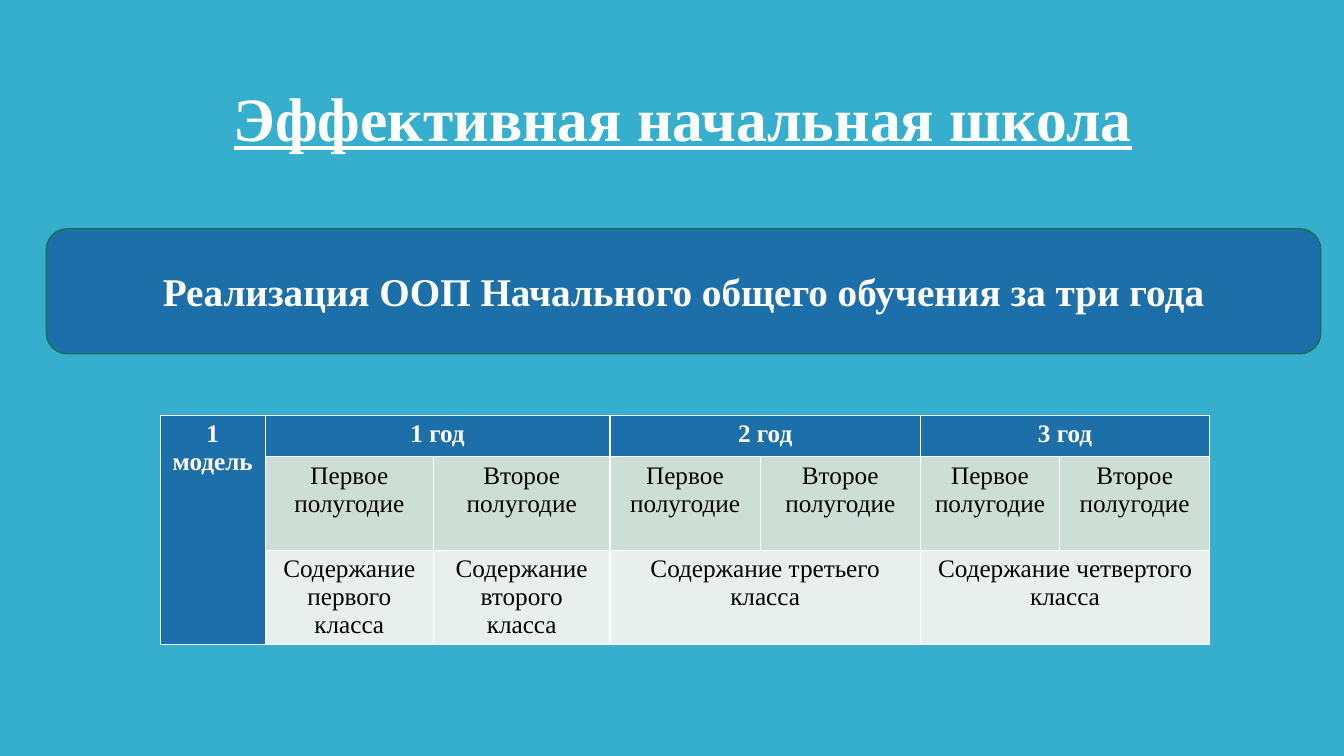
"""Build the slide on the three-year primary school model."""
from dataclasses import dataclass

from pptx import Presentation
from pptx.dml.color import RGBColor
from pptx.enum.shapes import MSO_SHAPE
from pptx.enum.text import MSO_ANCHOR, PP_ALIGN
from pptx.util import Inches, Pt

ROUND = MSO_SHAPE.ROUNDED_RECTANGLE
MIDDLE = MSO_ANCHOR.MIDDLE
CENTER = PP_ALIGN.CENTER


@dataclass(frozen=True)
class Theme:
    """Hold the colours, font and type sizes."""
    back: str = "36AFCE"
    blue: str = "1D6FA9"
    edge: str = "157259"
    white: str = "FFFFFF"
    black: str = "000000"
    sage: str = "CDDED6"
    pale: str = "E8EFEC"
    font: str = "Times New Roman"
    title: int = 44
    banner: int = 28
    cell: int = 18


theme = Theme()


def paint(fill, color):
    """Fill with one solid colour."""
    fill.solid()
    fill.fore_color.rgb = RGBColor.from_string(color)


def write(frame, text, size, color, bold=True):
    """Set centred text and format its run."""
    frame.text = text
    frame.word_wrap = True
    para = frame.paragraphs[0]
    para.alignment = CENTER
    font = para.runs[0].font
    font.name = theme.font
    font.size = Pt(size)
    font.bold = bold
    font.color.rgb = RGBColor.from_string(color)
    return para


deck = Presentation()
deck.slide_width = Inches(13.33)
deck.slide_height = Inches(7.5)
slide = deck.slides.add_slide(deck.slide_layouts[5])
paint(slide.background.fill, theme.back)

title = slide.shapes.title
title.left, title.top = Inches(1.67), Inches(0.41)
title.width, title.height = Inches(10.21), Inches(1.59)
title.text_frame.vertical_anchor = MIDDLE
head = write(title.text_frame, "Эффективная начальная школа", theme.title, theme.white)
head.line_spacing = 0.9
head.runs[0].font.underline = True

banner = slide.shapes.add_shape(
    ROUND, Inches(0.46), Inches(2.27), Inches(12.64), Inches(1.24))
banner.shadow.inherit = False
paint(banner.fill, theme.blue)
paint(banner.line.fill, theme.edge)
banner.line.width = Pt(1)
banner.text_frame.vertical_anchor = MIDDLE
write(banner.text_frame, "Реализация ООП Начального общего обучения за три года",
      theme.banner, theme.white)

widths = [1.04, 1.67, 1.75, 1.49, 1.59, 1.38, 1.49]
heights = [0.41, 0.93, 0.93]
table = slide.shapes.add_table(
    len(heights), len(widths), Inches(1.59), Inches(4.12),
    Inches(sum(widths)), Inches(sum(heights))).table
for column, width in zip(table.columns, widths):
    column.width = Inches(width)
for row, height in zip(table.rows, heights):
    row.height = Inches(height)

fills = [theme.blue, theme.sage, theme.pale]
for row, fill in zip(table.rows, fills):
    for cell in row.cells:
        paint(cell.fill, fill)

model = table.cell(0, 0)
model.merge(table.cell(2, 0))
for row in range(3):
    paint(table.cell(row, 0).fill, theme.blue)
for row, start in [(0, 1), (0, 3), (0, 5), (2, 3), (2, 5)]:
    table.cell(row, start).merge(table.cell(row, start + 1))

write(model.text_frame, "1 модель", theme.cell, theme.white)
for year in range(1, 4):
    cell = table.cell(0, 2 * year - 1)
    write(cell.text_frame, f"{year} год", theme.cell, theme.white)
for col in range(1, 7):
    half = "Первое" if col % 2 else "Второе"
    write(table.cell(1, col).text_frame, f"{half} полугодие",
          theme.cell, theme.black, False)
grades = {1: "первого", 2: "второго", 3: "третьего", 5: "четвертого"}
for col, grade in grades.items():
    write(table.cell(2, col).text_frame, f"Содержание {grade} класса",
          theme.cell, theme.black, False)

deck.save("out.pptx")
